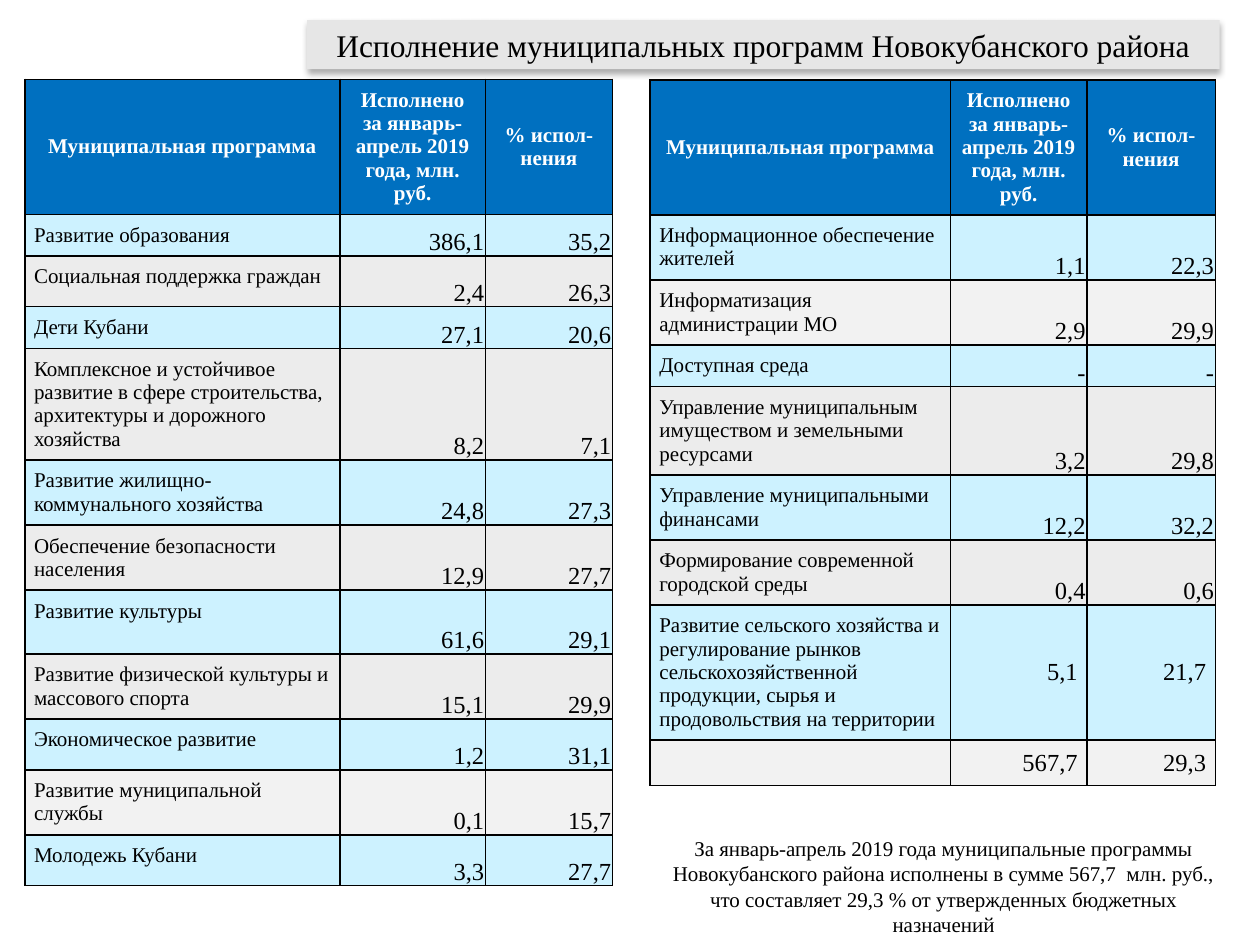
"""Build the slide on the execution of municipal programmes."""
import lxml.etree
import pptx
import pptx.dml.color
import pptx.enum.text
import pptx.oxml
import pptx.oxml.ns
import pptx.util

Pt = pptx.util.Pt
ALIGN = pptx.enum.text.PP_ALIGN
ANCHOR = pptx.enum.text.MSO_ANCHOR
FONT = "Times New Roman"
COLORS = {
    "text": "000000", "header_text": "FFFFFF", "header": "0070C0", "odd": "CDF2FF",
    "even": "ECECEC", "light": "F2F2F2", "title": "E6E6E6", "border": "000000",
}

TITLE = "Исполнение муниципальных программ Новокубанского района"
SUMMARY = (
    "За январь-апрель 2019 года муниципальные программы Новокубанского района "
    "исполнены в сумме 567,7  млн. руб., что составляет 29,3 % "
    "от утвержденных бюджетных назначений"
)
HEADER = (
    "Муниципальная программа",
    "Исполнено за январь-апрель 2019 года, млн. руб.",
    "% испол-нения",
)
HEADER_HEIGHT = 76
TABLES = [
    {
        "left": 371.5, "top": 45.6, "columns": (171.6, 78, 73.4),
        "light": {2, 8}, "centred": {7, 8},
        "programmes": [
            ("Информационное обеспечение жителей", "1,1", "22,3", 36.3),
            ("Информатизация администрации МО", "2,9", "29,9", 36.3),
            ("Доступная среда", "-", "-", 23),
            ("Управление муниципальным имуществом и земельными ресурсами",
             "3,2", "29,8", 49.6),
            ("Управление муниципальными финансами", "12,2", "32,2", 36.3),
            ("Формирование современной городской среды", "0,4", "0,6", 36.3),
            ("Развитие сельского хозяйства и регулирование рынков "
             "сельскохозяйственной продукции, сырья и продовольствия на территории",
             "5,1", "21,7", 76),
            ("", "567,7", "29,3", 25.2),
        ],
    },
    {
        "left": 14.2, "top": 45.3, "columns": (180, 83.2, 72.6),
        "light": {10}, "centred": set(),
        "programmes": [
            ("Развитие образования", "386,1", "35,2", 23),
            ("Социальная поддержка граждан", "2,4", "26,3", 29),
            ("Дети Кубани", "27,1", "20,6", 23),
            ("Комплексное и устойчивое развитие в сфере строительства, "
             "архитектуры и дорожного хозяйства", "8,2", "7,1", 63),
            ("Развитие жилищно-коммунального хозяйства", "24,8", "27,3", 36.5),
            ("Обеспечение безопасности населения", "12,9", "27,7", 36.5),
            ("Развитие культуры", "61,6", "29,1", 36.5),
            ("Развитие физической культуры и массового спорта", "15,1", "29,9", 36.5),
            ("Экономическое развитие", "1,2", "31,1", 29),
            ("Развитие муниципальной службы", "0,1", "15,7", 36.5),
            ("Молодежь Кубани", "3,3", "27,7", 29),
        ],
    },
]


def rgb(name):
    return pptx.dml.color.RGBColor.from_string(COLORS[name])


def write(frame, text, size, align, color="text", bold=False):
    frame.text = text
    paragraph = frame.paragraphs[0]
    paragraph.alignment = align
    font = paragraph.font
    font.name, font.size, font.bold = FONT, Pt(size), bold
    font.color.rgb = rgb(color)


def add_borders(cell):
    properties = cell._tc.get_or_add_tcPr()
    for index, side in enumerate(("lnL", "lnR", "lnT", "lnB")):
        properties.insert(index, pptx.oxml.parse_xml(
            f'<a:{side} {pptx.oxml.ns.nsdecls("a")} w="{Pt(1)}"><a:solidFill>'
            f'<a:srgbClr val="{COLORS["border"]}"/></a:solidFill></a:{side}>'))


def format_cell(cell, text, fill, size, align, anchor, tight=False, **style):
    write(cell.text_frame, text, size, align, **style)
    cell.vertical_anchor = anchor
    margin = Pt(0.75 if tight else 5.25)
    cell.margin_left = cell.margin_right = cell.margin_top = margin
    cell.margin_bottom = Pt(0) if tight else margin
    cell.fill.solid()
    cell.fill.fore_color.rgb = rgb(fill)
    add_borders(cell)


def add_programme_table(slide, content):
    programmes = content["programmes"]
    heights = [HEADER_HEIGHT] + [programme[-1] for programme in programmes]
    columns = content["columns"]
    table = slide.shapes.add_table(
        len(heights), len(columns), Pt(content["left"]), Pt(content["top"]),
        Pt(sum(columns)), Pt(sum(heights))).table
    for column, width in zip(table.columns, columns):
        column.width = Pt(width)
    for row, height in zip(table.rows, heights):
        row.height = Pt(height)
    for column, heading in enumerate(HEADER):
        format_cell(table.cell(0, column), heading, "header", 12, ALIGN.CENTER,
                    ANCHOR.MIDDLE, color="header_text", bold=True)
    for row, (name, *values, _) in enumerate(programmes, 1):
        fill = "light" if row in content["light"] else ("even", "odd")[row % 2]
        format_cell(table.cell(row, 0), name, fill, 12, ALIGN.LEFT, ANCHOR.TOP)
        centred = row in content["centred"]
        for column, value in enumerate(values, 1):
            format_cell(table.cell(row, column), value, fill, 14, ALIGN.RIGHT,
                        ANCHOR.MIDDLE if centred else ANCHOR.BOTTOM, tight=not centred)


def add_title(slide):
    title = slide.shapes.title
    title.left, title.top, title.width, title.height = Pt(175.5), Pt(11.5), Pt(521.5), Pt(28)
    write(title.text_frame, TITLE, 18, ALIGN.CENTER)
    title.text_frame.vertical_anchor = ANCHOR.MIDDLE
    title.fill.solid()
    title.fill.fore_color.rgb = rgb("title")
    title.line.fill.background()
    title.shadow.inherit = False
    effects = title._element.spPr.find(pptx.oxml.ns.qn("a:effectLst"))
    effects.append(pptx.oxml.parse_xml(
        f'<a:outerShdw {pptx.oxml.ns.nsdecls("a")} blurRad="{Pt(3.5)}" dist="{Pt(2.2)}" '
        'dir="5400000" rotWithShape="0"><a:srgbClr val="000000">'
        '<a:alpha val="32000"/></a:srgbClr></a:outerShdw>'))


def main():
    presentation = pptx.Presentation()
    presentation.slide_width, presentation.slide_height = Pt(720), Pt(540)
    slide = presentation.slides.add_slide(presentation.slide_layouts[5])
    add_title(slide)
    for content in TABLES:
        add_programme_table(slide, content)
    summary = slide.shapes.add_textbox(Pt(368.6), Pt(474), Pt(341.3), Pt(65.5)).text_frame
    summary.word_wrap = True
    write(summary, SUMMARY, 12, ALIGN.CENTER)
    presentation.save("out.pptx")


if __name__ == "__main__":
    main()
